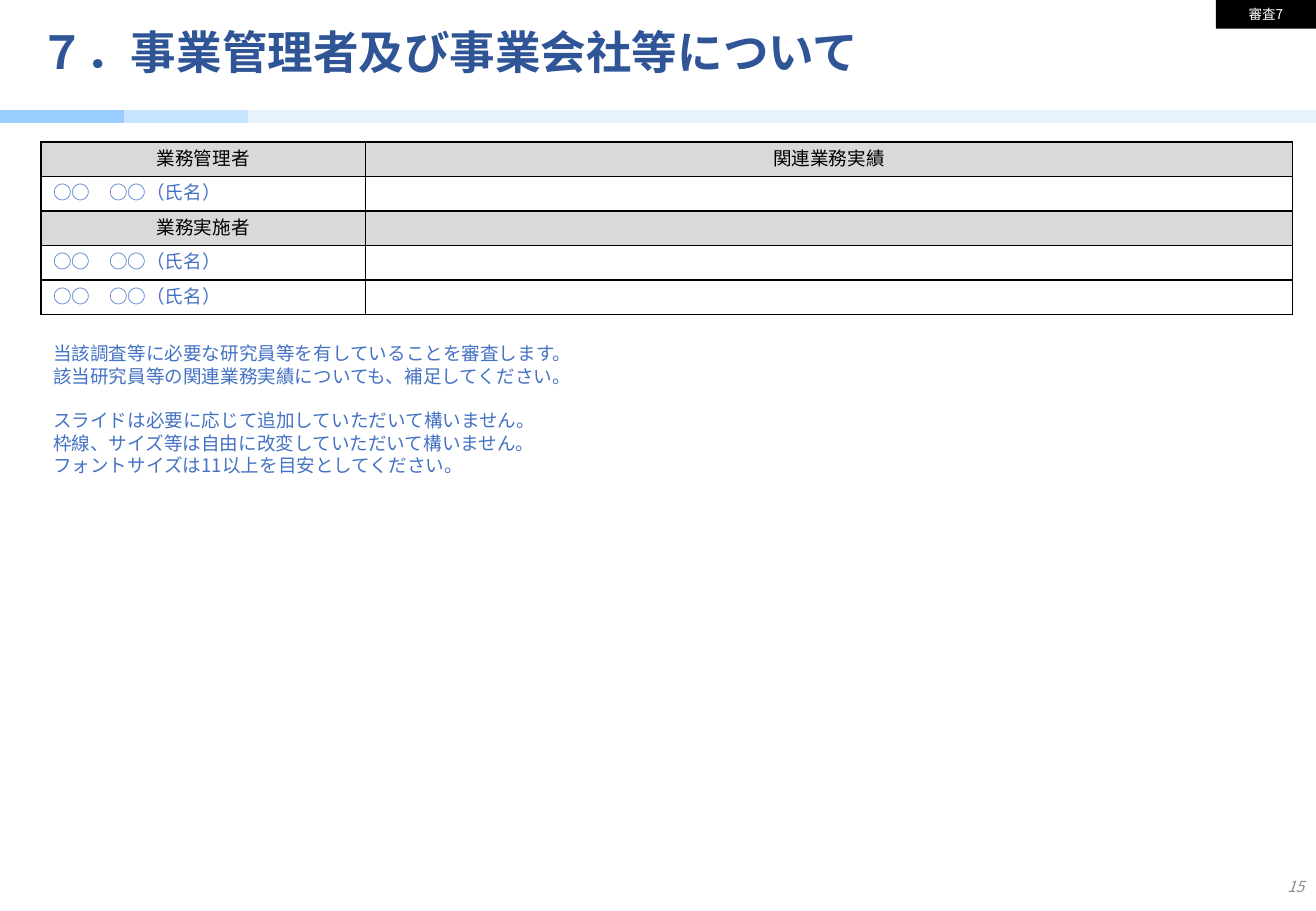
from lxml.etree import SubElement
from pptx import Presentation
from pptx.dml.color import RGBColor
from pptx.enum.shapes import MSO_SHAPE as SHAPE
from pptx.enum.text import MSO_ANCHOR as ANCHOR, PP_ALIGN as ALIGN
from pptx.oxml.ns import qn
from pptx.util import Pt

FONT = "Noto Sans CJK JP"
BLUE, NAVY, BLACK, WHITE = "4472C4", "2F5597", "000000", "FFFFFF"
HEADER_GRAY, PAGE_GRAY = "D9D9D9", "8C8C8C"
SLIDE_W, SLIDE_H = 780, 540
BODY_SIZE, BODY_LINE = 11, 13.2

BARS = [(73.5, "99CCFF"), (73.5, "C9E4FE"), (633, "E7F2FD")]
NAME = "○○　○○（氏名）"
ROWS = [
    ("業務管理者", "関連業務実績"),
    (NAME, ""),
    ("業務実施者", ""),
    (NAME, ""),
    (NAME, ""),
]
NOTE_GROUPS = [
    ["当該調査等に必要な研究員等を有していることを審査します。",
     "該当研究員等の関連業務実績についても、補足してください。"],
    ["スライドは必要に応じて追加していただいて構いません。",
     "枠線、サイズ等は自由に改変していただいて構いません。",
     "フォントサイズは11以上を目安としてください。"],
]


def rgb(color):
    return RGBColor.from_string(color)


def write(p, text, size, color, align=ALIGN.LEFT, bold=False, italic=False):
    """Fill a paragraph, with one font for Latin and Japanese characters."""
    p.text = text
    p.alignment = align
    for r in p.runs:
        f = r.font
        f.name, f.size, f.bold, f.italic = FONT, Pt(size), bold, italic
        f.color.rgb = rgb(color)
        SubElement(f._element, qn("a:ea"), typeface=FONT)


def add_text(slide, x, y, w, h, anchor=ANCHOR.MIDDLE):
    tf = slide.shapes.add_textbox(Pt(x), Pt(y), Pt(w), Pt(h)).text_frame
    tf.word_wrap = True
    tf.vertical_anchor = anchor
    return tf


def add_rect(slide, x, y, w, h, color):
    sp = slide.shapes.add_shape(SHAPE.RECTANGLE, Pt(x), Pt(y), Pt(w), Pt(h))
    sp.shadow.inherit = False
    sp.fill.solid()
    sp.fill.fore_color.rgb = rgb(color)
    sp.line.fill.background()
    return sp


def add_borders(cell):
    tc_pr = cell._tc.get_or_add_tcPr()
    for side in ("lnL", "lnR", "lnT", "lnB"):
        ln = SubElement(tc_pr, qn(f"a:{side}"), w=str(Pt(1)))
        fill = SubElement(ln, qn("a:solidFill"))
        SubElement(fill, qn("a:srgbClr"), val=BLACK)


def add_staff_table(slide, x, y, col_widths, row_h):
    table = slide.shapes.add_table(
        len(ROWS), len(col_widths), Pt(x), Pt(y),
        Pt(sum(col_widths)), Pt(row_h * len(ROWS))).table
    table.first_row = table.horz_banding = False
    for col, width in zip(table.columns, col_widths):
        col.width = Pt(width)
    for row, texts in zip(table.rows, ROWS):
        row.height = Pt(row_h)
        is_header = texts[0] != NAME
        for cell, text in zip(row.cells, texts):
            add_borders(cell)
            cell.fill.solid()
            cell.fill.fore_color.rgb = rgb(HEADER_GRAY if is_header else WHITE)
            cell.vertical_anchor = ANCHOR.MIDDLE
            p = cell.text_frame.paragraphs[0]
            write(p, text, BODY_SIZE, BLACK if is_header else BLUE,
                  ALIGN.CENTER if is_header else ALIGN.LEFT)
            p.line_spacing = Pt(BODY_LINE)
            p.font.size = Pt(BODY_SIZE)


def add_notes(slide, x, y, w, h):
    """Groups of lines, set one line apart."""
    tf = add_text(slide, x, y, w, h, ANCHOR.TOP)
    p = tf.paragraphs[0]
    for g, group in enumerate(NOTE_GROUPS):
        for i, line in enumerate(group):
            if g or i:
                p = tf.add_paragraph()
            write(p, line, BODY_SIZE, BLUE)
            p.line_spacing = Pt(BODY_LINE)
            if g and i == 0:
                p.space_before = Pt(BODY_LINE)


def main():
    prs = Presentation()
    prs.slide_width, prs.slide_height = Pt(SLIDE_W), Pt(SLIDE_H)
    slide = prs.slides.add_slide(prs.slide_layouts[6])

    x = 0
    for width, color in BARS:
        add_rect(slide, x, 65.3, width, 7.5, color)
        x += width

    title = add_text(slide, 16.5, 5, 718.5, 54.7).paragraphs[0]
    write(title, "７．事業管理者及び事業会社等について", 27, NAVY, bold=True)
    title.line_spacing = 0.9

    page = add_text(slide, 709, 511, 71, 29).paragraphs[0]
    write(page, "15", 9, PAGE_GRAY, ALIGN.RIGHT, italic=True)

    tag = add_rect(slide, 720.7, 0, 59.3, 17, BLACK)
    write(tag.text_frame.paragraphs[0], "審査7", 8, WHITE, ALIGN.CENTER)

    add_staff_table(slide, 24.4, 84.2, (192.2, 549.6), 20.44)
    add_notes(slide, 24.4, 199.4, 733.7, 87)
    prs.save("out.pptx")


if __name__ == "__main__":
    main()
